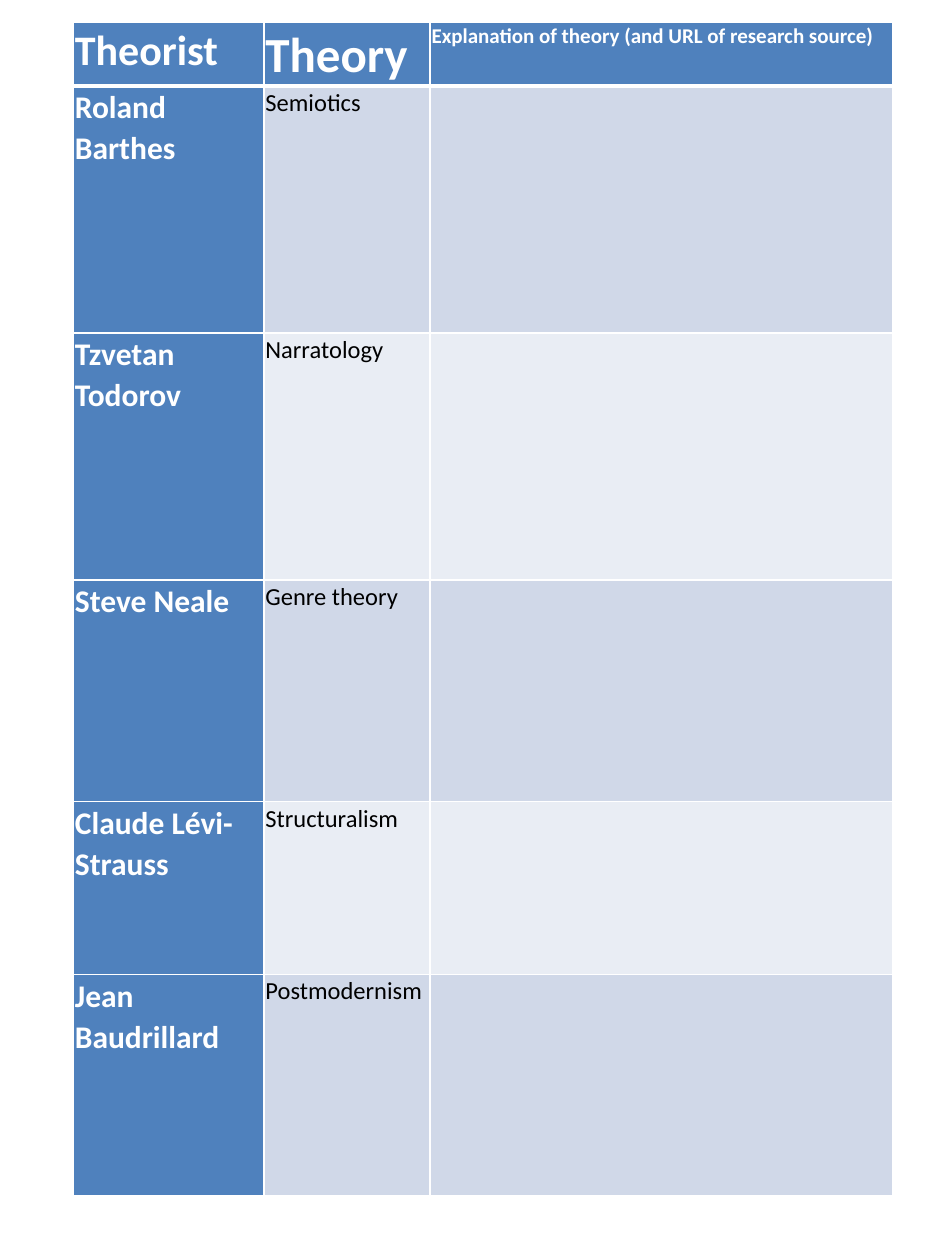
"""Build a one-page worksheet table of media theorists and their theories."""
from lxml import etree
from pptx import Presentation
from pptx import util as u
from pptx.dml.color import RGBColor
from pptx.enum import text
from pptx.oxml.ns import qn

HEADER = ("Theorist", "Theory", "Explanation of theory (and URL of research source)")
THEORISTS = [
    ("Roland Barthes", "Semiotics", ""),
    ("Tzvetan Todorov", "Narratology", ""),
    ("Steve Neale", "Genre theory", ""),
    ("Claude Lévi-Strauss", "Structuralism", ""),
    ("Jean Baudrillard", "Postmodernism", ""),
]
COL_WIDTHS = (3.84, 3.35, 9.32)
ROW_HEIGHTS = (1.27, 4.98, 4.98, 4.47, 3.48, 4.47)
LEFT, TOP = 1.48, 0.44

THEME = {
    "font": "Calibri",
    "accent": "4F81BD",
    "bands": ("D0D8E8", "E9EDF4"),
    "light": "FFFFFF",
    "dark": "000000",
    "header_sizes": (24, 28, 12),
    "name_size": 18,
    "body_size": 14,
    "spacing": 1.07,
    "rule": 1,
    "header_rule": 3,
}


def cell_style(row, col):
    """Return fill, text colour, size and weight for a grid position."""
    if row == 0:
        return THEME["accent"], THEME["light"], THEME["header_sizes"][col], True
    if col == 0:
        return THEME["accent"], THEME["light"], THEME["name_size"], True
    return THEME["bands"][(row - 1) % 2], THEME["dark"], THEME["body_size"], False


def set_borders(cell, row):
    """Draw the four edges, with a heavier rule below the header."""
    heavy = {0: "lnB", 1: "lnT"}.get(row)
    tc_pr = cell._tc.get_or_add_tcPr()
    for tag in ("lnL", "lnR", "lnT", "lnB"):
        width = THEME["header_rule"] if tag == heavy else THEME["rule"]
        ln = etree.SubElement(tc_pr, qn(f"a:{tag}"), w=str(u.Pt(width)))
        fill = etree.SubElement(ln, qn("a:solidFill"))
        etree.SubElement(fill, qn("a:srgbClr"), val=THEME["light"])


def fill_cell(cell, words, row, col):
    """Write and format one cell."""
    fill, color, size, bold = cell_style(row, col)
    set_borders(cell, row)
    cell.fill.solid()
    cell.fill.fore_color.rgb = RGBColor.from_string(fill)
    layout = {
        "margin_left": u.Cm(0.03), "margin_right": u.Cm(0.03),
        "margin_top": 0, "margin_bottom": 0,
        "vertical_anchor": text.MSO_ANCHOR.TOP,
    }
    for name, value in layout.items():
        setattr(cell, name, value)
    if words:
        p = cell.text_frame.paragraphs[0]
        p.line_spacing = THEME["spacing"]
        r = p.add_run()
        r.text = words
        for name, value in {"name": THEME["font"], "size": u.Pt(size), "bold": bold}.items():
            setattr(r.font, name, value)
        r.font.color.rgb = RGBColor.from_string(color)


def main():
    """Lay out the table and save the deck."""
    prs = Presentation()
    prs.slide_width, prs.slide_height = u.Cm(19.05), u.Cm(25.4)
    s = prs.slides.add_slide(prs.slide_layouts[6])
    rows = [HEADER, *THEORISTS]
    table = s.shapes.add_table(
        len(rows), len(HEADER), u.Cm(LEFT), u.Cm(TOP),
        u.Cm(sum(COL_WIDTHS)), u.Cm(sum(ROW_HEIGHTS))).table
    for column, width in zip(table.columns, COL_WIDTHS):
        column.width = u.Cm(width)
    for line, height in zip(table.rows, ROW_HEIGHTS):
        line.height = u.Cm(height)
    for i, row in enumerate(rows):
        for j, words in enumerate(row):
            fill_cell(table.cell(i, j), words, i, j)
    prs.save("out.pptx")


if __name__ == "__main__":
    main()
